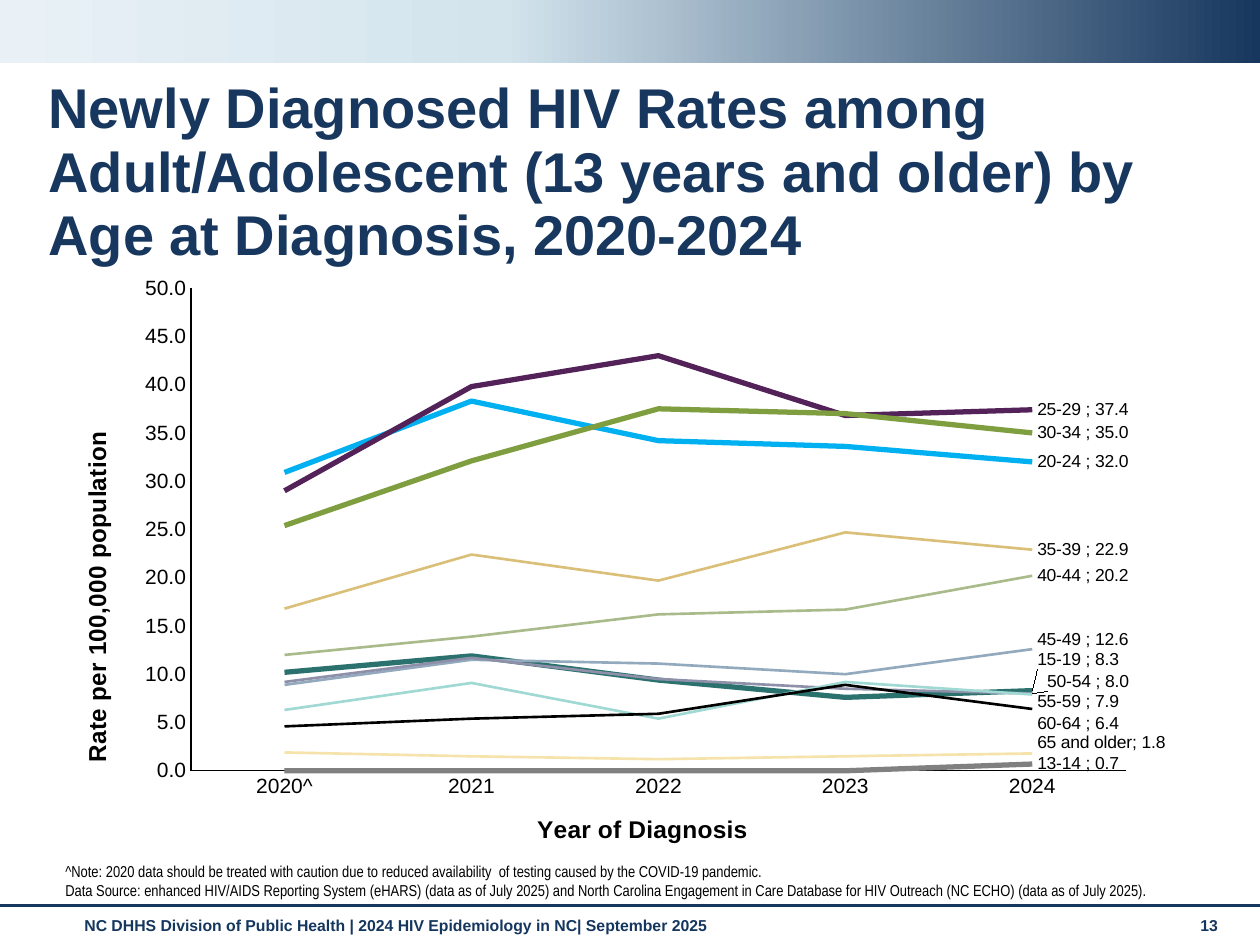
import copy
from dataclasses import dataclass

import lxml.etree
import pptx
import pptx.chart.data
import pptx.dml.color
import pptx.enum.chart
import pptx.enum.shapes
import pptx.enum.text
import pptx.oxml.ns
import pptx.util

SCALE = 914400 / 126
qn = pptx.oxml.ns.qn


@dataclass(frozen=True)
class Theme:
    navy: str = "17375E"
    foot: str = "15365E"
    black: str = "000000"
    fade: tuple = ((0, "E9F1F6"), (0.4, "D3E4ED"), (1, "17375E"))
    font: str = "Arial"
    slim: str = "Arial Narrow"
    head: int = 32
    name: int = 14
    tick: int = 12
    label: int = 10
    small: int = 9
    thick: float = 3
    thin: float = 1.5
    axis: float = 0.75


@dataclass(frozen=True)
class Box:
    x: int
    y: int
    w: int
    h: int


@dataclass(frozen=True)
class Text:
    box: Box
    lines: tuple
    size: int
    color: str
    font: str = Theme.font
    bold: bool = True
    space: float = 1.0
    low: bool = False


@dataclass(frozen=True)
class Group:
    """One age group; dx and dy shift its end label in px."""
    name: str
    rates: tuple
    color: str
    width: float = Theme.thin
    dx: int = 0
    dy: int = 0


THEME = Theme()
PLOT = Box(53, 271, 1170, 580)
YEARS = ("2020^", "2021", "2022", "2023", "2024")
FORMAT = "#,##0.0"
GROUPS = (
    Group("13-14 ", (0, 0, 0, 0, 0.7), "808080", THEME.thick),
    Group("15-19 ", (10.2, 11.9, 9.4, 7.6, 8.3), "2B726F", THEME.thick, dy=-31),
    Group("20-24 ", (30.9, 38.3, 34.2, 33.6, 32), "00B0F0", THEME.thick),
    Group("25-29 ", (29, 39.8, 43, 36.8, 37.4), "522258", THEME.thick),
    Group("30-34 ", (25.4, 32.1, 37.5, 37, 35), "7F9E3F", THEME.thick),
    Group("35-39 ", (16.8, 22.4, 19.7, 24.7, 22.9), "D9BF77"),
    Group("40-44 ", (12, 13.9, 16.2, 16.7, 20.2), "A9BB8B"),
    Group("45-49 ", (8.9, 11.5, 11.1, 10, 12.6), "93A9BD", dy=-10),
    Group("50-54 ", (9.2, 11.7, 9.5, 8.5, 8), "8E8FA8", dx=10, dy=-12),
    Group("55-59 ", (6.3, 9.1, 5.4, 9.2, 7.9), "A0D8D3", dy=7),
    Group("60-64 ", (4.6, 5.4, 5.9, 8.9, 6.4), "000000", dy=15),
    Group("65 and older", (1.9, 1.5, 1.2, 1.5, 1.8), "F6E2AB", dy=-11),
)
TEXTS = (
    Text(Box(72, 910, 1101, 37),
         ("NC DHHS Division of Public Health | 2024 HIV Epidemiology in NC| September 2025",),
         THEME.small, THEME.foot),
    Text(Box(1188, 910, 55, 37), ("13",), THEME.small, THEME.foot),
    Text(Box(36, 71, 1188, 76),
         ("Newly Diagnosed HIV Rates among Adult/Adolescent (13 years and older) "
          "by Age at Diagnosis, 2020-2024",),
         THEME.head, THEME.navy, space=0.95),
    Text(Box(53, 879, 1170, 27),
         ("^Note: 2020 data should be treated with caution due to reduced availability  "
          "of testing caused by the COVID-19 pandemic.",
          "Data Source: enhanced HIV/AIDS Reporting System (eHARS) (data as of July 2025) "
          "and North Carolina Engagement in Care Database for HIV Outreach (NC ECHO) "
          "(data as of July 2025)."),
         THEME.small, THEME.black, THEME.slim, bold=False, low=True),
)


def px(n: int) -> int:
    return round(n * SCALE)


def rgb(code: str) -> pptx.dml.color.RGBColor:
    return pptx.dml.color.RGBColor.from_string(code)


def place(box: Box) -> tuple:
    return px(box.x), px(box.y), px(box.w), px(box.h)


def style(font, size: int, color: str, name: str = THEME.font, bold: bool = False) -> None:
    font.size, font.name, font.bold = pptx.util.Pt(size), name, bold
    font.color.rgb = rgb(color)


def stroke(line, color: str, width: float) -> None:
    line.color.rgb = rgb(color)
    line.width = pptx.util.Pt(width)


def write(slide, text: Text) -> None:
    frame = slide.shapes.add_textbox(*place(text.box)).text_frame
    frame.word_wrap = True
    anchor = pptx.enum.text.MSO_ANCHOR
    frame.vertical_anchor = anchor.BOTTOM if text.low else anchor.TOP
    frame.text = "\n".join(text.lines)
    for para in frame.paragraphs:
        para.line_spacing = text.space
        for run in para.runs:
            style(run.font, text.size, text.color, text.font, text.bold)


def banner(slide, box: Box) -> None:
    shape = slide.shapes.add_shape(pptx.enum.shapes.MSO_SHAPE.RECTANGLE, *place(box))
    shape.shadow.inherit = False
    shape.line.fill.background()
    shape.fill.gradient()
    shape.fill.gradient_angle = 0
    stops = shape._element.spPr.find(".//" + qn("a:gsLst"))
    stops.append(copy.deepcopy(stops[0]))
    for stop, (pos, color) in zip(shape.fill.gradient_stops, THEME.fade):
        stop.position, stop.color.rgb = pos, rgb(color)


def rule(slide, y: int, width: int) -> None:
    line = slide.shapes.add_connector(
        pptx.enum.shapes.MSO_CONNECTOR.STRAIGHT, 0, px(y), px(width), px(y))
    stroke(line.line, THEME.navy, 1.75)
    lxml.etree.SubElement(line._element.spPr, qn("a:effectLst"))


def layout(**parts):
    """Make a manual chart layout from its named parts."""
    root = lxml.etree.Element(qn("c:layout"))
    hand = lxml.etree.SubElement(root, qn("c:manualLayout"))
    for tag, val in parts.items():
        lxml.etree.SubElement(hand, qn("c:" + tag)).set("val", str(val))
    return root


def axis(item, title: str, x: float, y: float) -> None:
    item.has_major_gridlines = False
    item.major_tick_mark = pptx.enum.chart.XL_TICK_MARK.NONE
    style(item.tick_labels.font, THEME.tick, THEME.black)
    stroke(item.format.line, THEME.black, THEME.axis)
    frame = item.axis_title.text_frame
    frame.text = title
    style(frame.paragraphs[0].runs[0].font, THEME.name, THEME.black, bold=True)
    node = item.axis_title._element
    for old in node.findall(qn("c:layout")):
        node.remove(old)
    node.find(qn("c:tx")).addnext(layout(xMode="edge", yMode="edge", x=x, y=y))


def tag(series, group: Group) -> None:
    """Label the last point with the group name and its rate."""
    series.data_labels.show_value = False
    label = series.points[len(YEARS) - 1].data_label
    style(label.font, THEME.label, THEME.black)
    label.position = pptx.enum.chart.XL_LABEL_POSITION.RIGHT
    node = series._element.find(".//" + qn("c:dLbl"))
    node.find(qn("c:showSerName")).set("val", "1")
    lxml.etree.SubElement(node, qn("c:separator")).text = "; "
    form = lxml.etree.Element(qn("c:numFmt"), formatCode=FORMAT, sourceLinked="0")
    node.find(qn("c:idx")).addnext(form)
    if group.dx or group.dy:
        form.addprevious(layout(x=round(group.dx / PLOT.w, 4), y=round(group.dy / PLOT.h, 4)))


def graph(slide) -> None:
    data = pptx.chart.data.CategoryChartData(number_format=FORMAT)
    data.categories = YEARS
    for group in GROUPS:
        data.add_series(group.name, group.rates)
    chart = slide.shapes.add_chart(
        pptx.enum.chart.XL_CHART_TYPE.LINE, *place(PLOT), data).chart
    chart.has_legend = chart.has_title = False
    style(chart.font, THEME.label, THEME.black)
    plot = chart.plots[0]
    plot.vary_by_categories = False
    area = chart._chartSpace.find(".//" + qn("c:plotArea"))
    for old in area.findall(qn("c:layout")):
        area.remove(old)
    area.insert(0, layout(layoutTarget="inner", xMode="edge", yMode="edge",
                          x=0.118, y=0.03, w=0.799, h=0.843))
    axis(chart.category_axis, "Year of Diagnosis", 0.41, 0.94)
    axis(chart.value_axis, "Rate per 100,000 population", 0.02, 0.28)
    scale = chart.value_axis
    scale.minimum_scale, scale.maximum_scale, scale.major_unit = 0, 50, 5
    scale.tick_labels.number_format = FORMAT
    scale.tick_labels.number_format_is_linked = False
    for series, group in zip(plot.series, GROUPS):
        series.smooth = False
        series.marker.style = pptx.enum.chart.XL_MARKER_STYLE.NONE
        stroke(series.format.line, group.color, group.width)
        tag(series, group)


def main() -> None:
    deck = pptx.Presentation()
    deck.slide_width, deck.slide_height = px(1260), px(945)
    slide = deck.slides.add_slide(deck.slide_layouts[6])
    banner(slide, Box(0, 0, 1260, 63))
    rule(slide, 906, 1260)
    graph(slide)
    for text in TEXTS:
        write(slide, text)
    deck.save("out.pptx")


if __name__ == "__main__":
    main()
